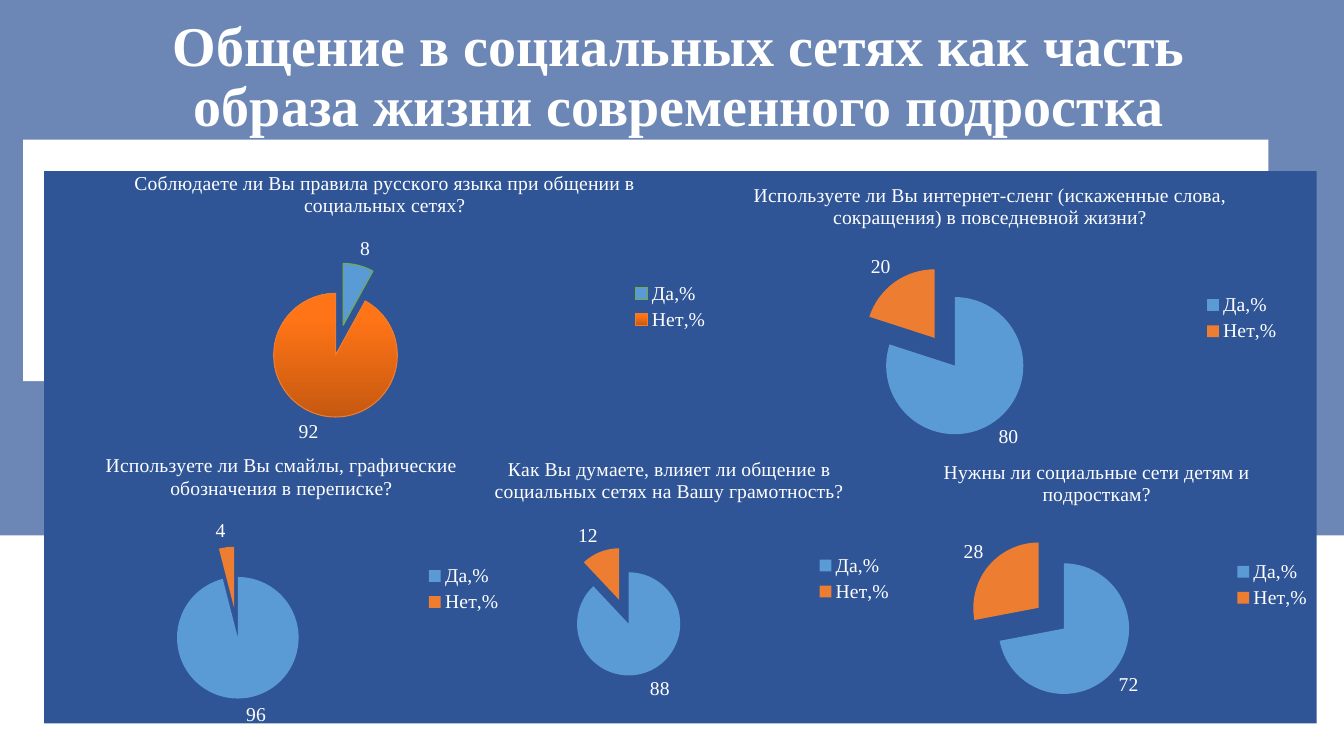
from dataclasses import dataclass

from lxml import etree
from pptx import Presentation
from pptx.chart.chart import Chart
from pptx.chart.data import CategoryChartData
from pptx.dml.color import RGBColor
from pptx.enum.chart import XL_CHART_TYPE, XL_LABEL_POSITION, XL_LEGEND_POSITION
from pptx.enum.shapes import MSO_SHAPE
from pptx.enum.text import MSO_ANCHOR, MSO_AUTO_SIZE, PP_ALIGN
from pptx.oxml.ns import qn
from pptx.slide import Slide
from pptx.util import Emu, Pt

PIE = XL_CHART_TYPE.PIE
OUTSIDE = XL_LABEL_POSITION.OUTSIDE_END
RIGHT = XL_LEGEND_POSITION.RIGHT
RECTANGLE = MSO_SHAPE.RECTANGLE
TOP = MSO_ANCHOR.TOP
NO_AUTOFIT = MSO_AUTO_SIZE.NONE
CENTER = PP_ALIGN.CENTER

EMU_PER_PX = 9525
SLIDE_WIDTH, SLIDE_HEIGHT = 1280, 720
FONT = "Times New Roman"
ANSWERS = ("Да,%", "Нет,%")
EXPLOSION = 25
COLORS = {
    "white": "FFFFFF",
    "navy": "2F5597",
    "yes": "5B9BD5",
    "no": "ED7D31",
    "green": "70AD47",
    "dark_orange": "C65910",
    "bright_orange": "FF7416",
}


@dataclass(frozen=True)
class Box:
    left: int
    top: int
    width: int
    height: int

    def emu(self) -> tuple[Emu, ...]:
        sides = (self.left, self.top, self.width, self.height)
        return tuple(Emu(side * EMU_PER_PX) for side in sides)


@dataclass(frozen=True)
class Panel:
    box: Box
    color: str
    opacity: int = 100


@dataclass(frozen=True)
class Question:
    text: str
    box: Box
    yes: int
    shaded: bool = False


PANELS = (
    Panel(Box(0, 0, SLIDE_WIDTH, SLIDE_HEIGHT), "navy", 70),
    Panel(Box(22, 133, 1186, 230), "white"),
    Panel(Box(0, 510, SLIDE_WIDTH, 210), "white"),
    Panel(Box(42, 163, 1212, 526), "navy"),
)
HEADING = "Общение в социальных сетях как часть образа жизни современного подростка"
HEADING_BOX = Box(104, 12, 1085, 52)
QUESTIONS = (
    Question("Соблюдаете ли Вы правила русского языка при общении в социальных сетях?",
             Box(47, 148, 639, 288), 8, shaded=True),
    Question("Используете ли Вы смайлы, графические обозначения в переписке?",
             Box(47, 417, 442, 288), 96),
    Question("Используете ли Вы интернет-сленг (искаженные слова, сокращения) "
             "в повседневной жизни?",
             Box(656, 159, 574, 288), 80),
    Question("Как Вы думаете, влияет ли общение в социальных сетях на Вашу грамотность?",
             Box(414, 421, 447, 260), 88),
    Question("Нужны ли социальные сети детям и подросткам?",
             Box(830, 424, 429, 266), 72),
)


def rgb(name: str) -> RGBColor:
    return RGBColor.from_string(COLORS[name])


def style_font(font, size: int, bold: bool = False) -> None:
    font.name = FONT
    font.size = Pt(size)
    font.bold = bold
    font.color.rgb = rgb("white")


def add_panel(slide: Slide, panel: Panel) -> None:
    rectangle = slide.shapes.add_shape(RECTANGLE, *panel.box.emu())
    rectangle.shadow.inherit = False
    rectangle.line.fill.background()
    rectangle.fill.solid()
    rectangle.fill.fore_color.rgb = rgb(panel.color)
    if panel.opacity < 100:
        color = rectangle.fill._xPr.find(".//" + qn("a:srgbClr"))
        etree.SubElement(color, qn("a:alpha"), val=str(panel.opacity * 1000))


def set_heading(slide: Slide) -> None:
    heading = slide.shapes.title
    heading.left, heading.top, heading.width, heading.height = HEADING_BOX.emu()
    frame = heading.text_frame
    frame.text = HEADING
    frame.word_wrap = True
    frame.auto_size = NO_AUTOFIT
    frame.vertical_anchor = TOP
    paragraph = frame.paragraphs[0]
    paragraph.alignment = CENTER
    paragraph.line_spacing = 0.9
    style_font(paragraph.runs[0].font, 40, bold=True)
    slide.shapes._spTree.append(heading._element)  # bring in front of the panels


def shade_slices(chart: Chart) -> None:
    """Outline both slices and give the second a vertical gradient."""
    points = chart.plots[0].series[0].points
    for index, outline in enumerate(("green", "no")):
        line = points[index].format.line
        line.color.rgb = rgb(outline)
        line.width = Pt(0.75)
    fill = points[1].format.fill
    fill.gradient()
    fill.gradient_angle = 90
    for stop, color in zip(fill.gradient_stops, ("dark_orange", "bright_orange")):
        stop.color.rgb = rgb(color)
    for stop, position in zip(chart._chartSpace.iter(qn("a:gs")), (0, 80)):
        stop.set("pos", str(position * 1000))


def explode_slices(chart: Chart) -> None:
    series = chart._chartSpace.find(".//" + qn("c:ser"))
    explosion = etree.Element(qn("c:explosion"), val=str(EXPLOSION))
    series.find(qn("c:tx")).addnext(explosion)


def add_pie(slide: Slide, question: Question) -> None:
    data = CategoryChartData(number_format="0")
    data.categories = ANSWERS
    data.add_series(question.text, (question.yes, 100 - question.yes))
    chart = slide.shapes.add_chart(PIE, *question.box.emu(), data).chart
    style_font(chart.font, 14)

    chart.has_title = True
    caption = chart.chart_title
    caption.include_in_layout = False
    caption.text_frame.text = question.text
    style_font(caption.text_frame.paragraphs[0].runs[0].font, 14)

    chart.has_legend = True
    chart.legend.position = RIGHT
    chart.legend.include_in_layout = False
    style_font(chart.legend.font, 14)

    plot = chart.plots[0]
    plot.vary_by_categories = True
    plot.has_data_labels = True
    labels = plot.data_labels
    labels.show_value = True
    labels.position = OUTSIDE
    style_font(labels.font, 14)

    for index, color in enumerate(("yes", "no")):
        fill = plot.series[0].points[index].format.fill
        fill.solid()
        fill.fore_color.rgb = rgb(color)
    if question.shaded:
        shade_slices(chart)
    explode_slices(chart)


def main() -> None:
    presentation = Presentation()
    presentation.slide_width = Emu(SLIDE_WIDTH * EMU_PER_PX)
    presentation.slide_height = Emu(SLIDE_HEIGHT * EMU_PER_PX)
    slide = presentation.slides.add_slide(presentation.slide_layouts[5])
    for panel in PANELS:
        add_panel(slide, panel)
    set_heading(slide)
    for question in QUESTIONS:
        add_pie(slide, question)
    presentation.save("out.pptx")


if __name__ == "__main__":
    main()
